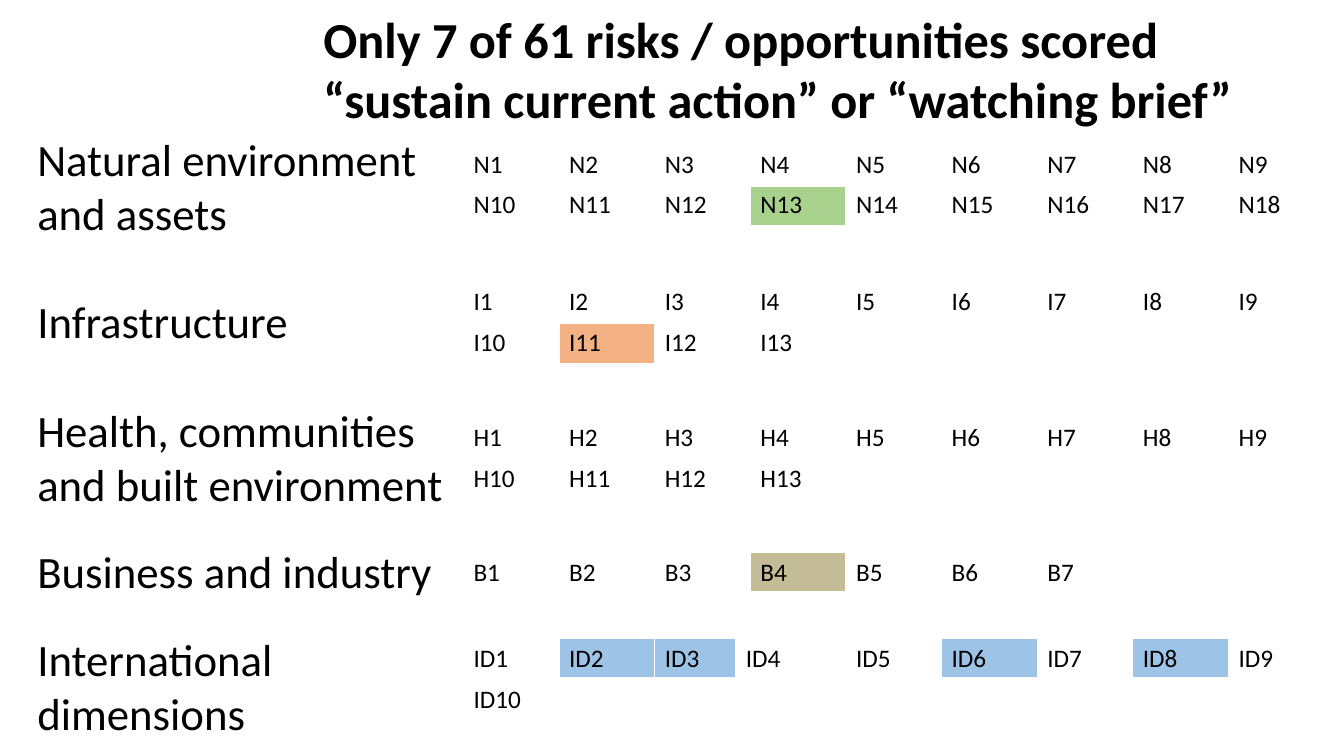
from dataclasses import dataclass

from lxml.etree import SubElement
from pptx import Presentation
from pptx.dml.color import RGBColor
from pptx.enum.text import MSO_ANCHOR
from pptx.oxml.ns import qn
from pptx.util import Cm, Pt


@dataclass(frozen=True)
class Theme:
    font: str = "Calibri"
    text: str = "000000"
    paper: str = "FFFFFF"
    green: str = "A9D18E"
    orange: str = "F4B183"
    tan: str = "C4BC96"
    blue: str = "9DC3E6"
    title_size: int = 36
    label_size: int = 32
    code_size: int = 18


THEME = Theme()
COLUMNS = 9
ROWS = 2
COLUMN_WIDTH = 2.41
ROW_HEIGHT = 1.03
TABLE_LEFT = 11.68
THIN, THICK = 1, 3

HIGHLIGHTS = {
    "N13": THEME.green,
    "I11": THEME.orange,
    "B4": THEME.tan,
    **dict.fromkeys(("ID2", "ID3", "ID6", "ID8"), THEME.blue),
}

RISK_TABLES = [
    ("N", 18, 3.63, {}),
    ("I", 13, 7.09, {}),
    ("H", 13, 10.52, {}),
    ("B", 7, 13.92, {}),
    ("ID", 10, 16.08, {2: 2.04, 3: 2.78}),
]

SECTION_LABELS = [
    ("Natural environment", 0),
    ("and assets", 0),
    ("Infrastructure", 39),
    ("Health, communities", 39),
    ("and built environment", 0),
    ("Business and industry", 24.4),
    ("International", 24.4),
    ("dimensions", 0),
]

TITLE = (
    "Only 7 of 61 risks / opportunities scored "
    "“sustain current action” or “watching brief”"
)


def write(para, text, size, bold=False):
    span = para.add_run()
    span.text = text
    formats = {"name": THEME.font, "size": Pt(size), "bold": bold}
    for name, value in formats.items():
        setattr(span.font, name, value)
    span.font.color.rgb = RGBColor.from_string(THEME.text)


def add_text(page, left, top, width, height, lines, size, bold=False):
    box = page.shapes.add_textbox(Cm(left), Cm(top), Cm(width), Cm(height))
    frame = box.text_frame
    frame.word_wrap = True
    for index, (text, gap) in enumerate(lines):
        para = frame.add_paragraph() if index else frame.paragraphs[0]
        if gap:
            para.space_before = Pt(gap)
        write(para, text, size, bold)


def add_borders(cell, bottom):
    properties = cell._tc.get_or_add_tcPr()
    widths = {"a:lnL": THIN, "a:lnR": THIN, "a:lnT": THIN, "a:lnB": bottom}
    for tag, width in widths.items():
        line = SubElement(properties, qn(tag), w=str(Pt(width)))
        fill = SubElement(line, qn("a:solidFill"))
        SubElement(fill, qn("a:srgbClr"), val=THEME.paper)


def fill_cell(cell, text, bottom):
    add_borders(cell, bottom)
    cell.fill.solid()
    cell.fill.fore_color.rgb = RGBColor.from_string(HIGHLIGHTS.get(text, THEME.paper))
    cell.vertical_anchor = MSO_ANCHOR.TOP
    if text:
        write(cell.text_frame.paragraphs[0], text, THEME.code_size)


def add_risk_table(page, prefix, count, top, widths):
    table = page.shapes.add_table(
        ROWS, COLUMNS, Cm(TABLE_LEFT), Cm(top),
        Cm(COLUMNS * COLUMN_WIDTH), Cm(ROWS * ROW_HEIGHT),
    ).table
    for name, value in {"first_row": False, "horz_banding": False}.items():
        setattr(table, name, value)
    for index, column in enumerate(table.columns):
        column.width = Cm(widths.get(index, COLUMN_WIDTH))
    for row in table.rows:
        row.height = Cm(ROW_HEIGHT)
    for index in range(ROWS * COLUMNS):
        row, column = divmod(index, COLUMNS)
        text = f"{prefix}{index + 1}" if index < count else ""
        fill_cell(table.cell(row, column), text, THIN if row else THICK)


def main():
    deck = Presentation()
    deck.slide_width, deck.slide_height = Cm(33.87), Cm(19.05)
    page = deck.slides.add_slide(deck.slide_layouts[6])
    for risk_table in RISK_TABLES:
        add_risk_table(page, *risk_table)
    add_text(page, 0.69, 3.2, 15.95, 15.82, SECTION_LABELS, THEME.label_size)
    add_text(page, 7.9, 0.08, 25.43, 3.33, [(TITLE, 0)], THEME.title_size, True)
    deck.save("out.pptx")


if __name__ == "__main__":
    main()
